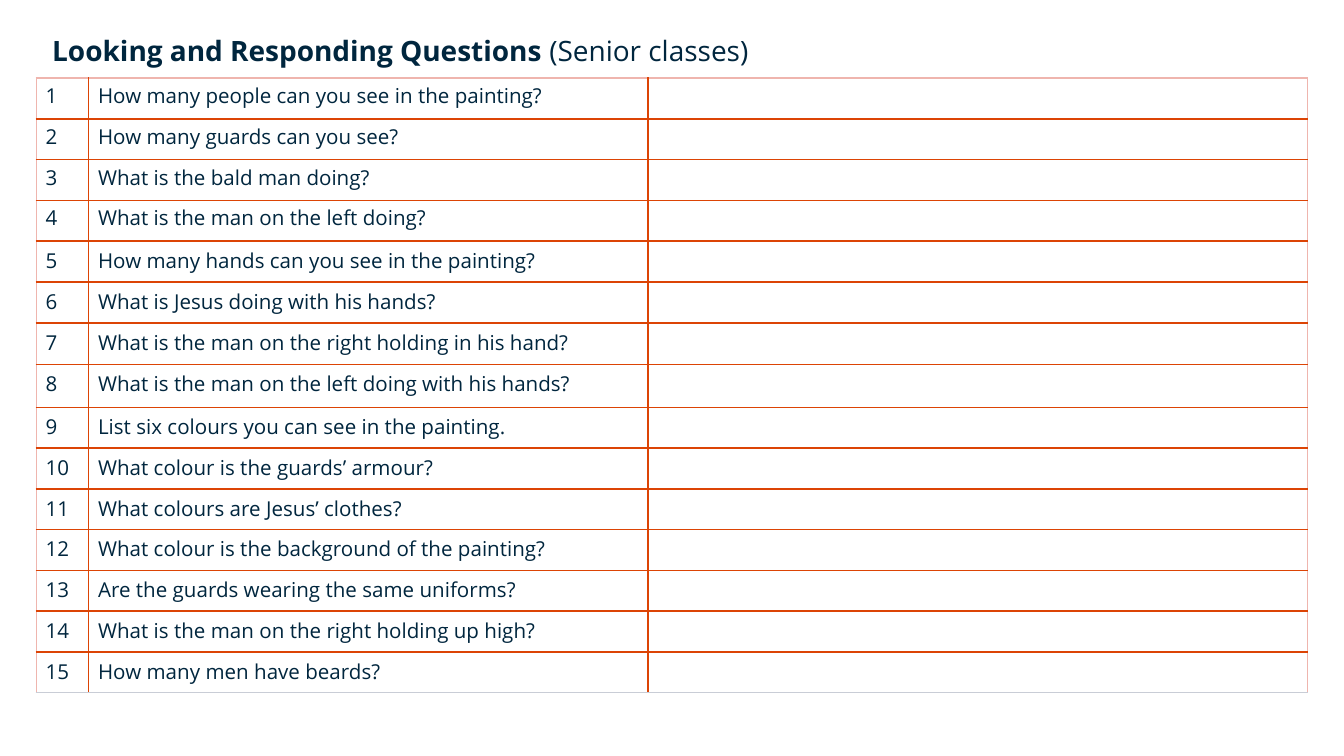
from lxml.etree import SubElement
from pptx import Presentation
from pptx.dml.color import RGBColor
from pptx.oxml.ns import qn
from pptx.util import Inches, Pt

COLORS = {"text": "00263E", "grid": "DC4405", "edge": "EFB5AE", "base": "C9CDD6"}
FONT = "Open Sans"
QUESTIONS = [
    "How many people can you see in the painting?",
    "How many guards can you see?",
    "What is the bald man doing?",
    "What is the man on the left doing?",
    "How many hands can you see in the painting?",
    "What is Jesus doing with his hands?",
    "What is the man on the right holding in his hand?",
    "What is the man on the left doing with his hands?",
    "List six colours you can see in the painting.",
    "What colour is the guards’ armour?",
    "What colours are Jesus’ clothes?",
    "What colour is the background of the painting?",
    "Are the guards wearing the same uniforms?",
    "What is the man on the right holding up high?",
    "How many men have beards?",
]
COLUMN_WIDTHS = [0.39, 4.16, 4.91]
TABLE_HEIGHT = 4.58
TALL_ROWS = {6: 0.31, 7: 0.32}
TIGHT_ROWS = 4
MARGINS = {"margin_left": 0.07, "margin_right": 0.07, "margin_top": 0.04, "margin_bottom": 0.04}


def add_span(para, text, size, bold=False):
    span = para.add_run()
    span.text = text
    for name, value in {"name": FONT, "size": Pt(size), "bold": bold}.items():
        setattr(span.font, name, value)
    span.font.color.rgb = RGBColor.from_string(COLORS["text"])


def add_border(cell, side, color, width=1):
    """Draw one cell edge; side is L, R, T or B."""
    line = SubElement(cell._tc.get_or_add_tcPr(), qn(f"a:ln{side}"), w=str(Pt(width)))
    fill = SubElement(line, qn("a:solidFill"))
    SubElement(fill, qn("a:srgbClr"), val=COLORS[color])


deck = Presentation()
deck.slide_width = Inches(10)
deck.slide_height = deck.slide_width * 9 // 16
page = deck.slides.add_slide(deck.slide_layouts[6])

# Title
box = page.shapes.add_textbox(Inches(0.29), Inches(0.2), Inches(9.59), Inches(0.35))
box.text_frame.word_wrap = True
title = box.text_frame.paragraphs[0]
add_span(title, "Looking and Responding Questions ", 15, bold=True)
add_span(title, "(Senior classes)", 15)

# Question table
row_count, column_count = len(QUESTIONS), len(COLUMN_WIDTHS)
table = page.shapes.add_table(
    row_count, column_count, Inches(0.27), Inches(0.58),
    Inches(sum(COLUMN_WIDTHS)), Inches(TABLE_HEIGHT),
).table
table.first_row = table.horz_banding = False
for column, width in zip(table.columns, COLUMN_WIDTHS):
    column.width = Inches(width)
plain_height = (TABLE_HEIGHT - sum(TALL_ROWS.values())) / (row_count - len(TALL_ROWS))

for r, question in enumerate(QUESTIONS):
    table.rows[r].height = Inches(TALL_ROWS.get(r, plain_height))
    for c, text in enumerate([str(r + 1), question, ""]):
        cell = table.cell(r, c)
        for name, value in MARGINS.items():
            setattr(cell, name, Inches(value))
        add_border(cell, "L", "edge" if c == 0 else "grid")
        add_border(cell, "R", "edge" if c == column_count - 1 else "grid")
        add_border(cell, "T", "edge" if r == 0 else "grid")
        if r == row_count - 1:
            add_border(cell, "B", "base", 0.5)
        else:
            add_border(cell, "B", "grid")
        cell.fill.background()

        para = cell.text_frame.paragraphs[0]
        if text:
            if r < TIGHT_ROWS:
                para.line_spacing, para.space_before = 0.9, Pt(10)
            add_span(para, text, 11)
        else:
            # An empty answer cell keeps the small size, so its row does not grow
            SubElement(para._p, qn("a:endParaRPr"), sz="1100")

deck.save("out.pptx")
